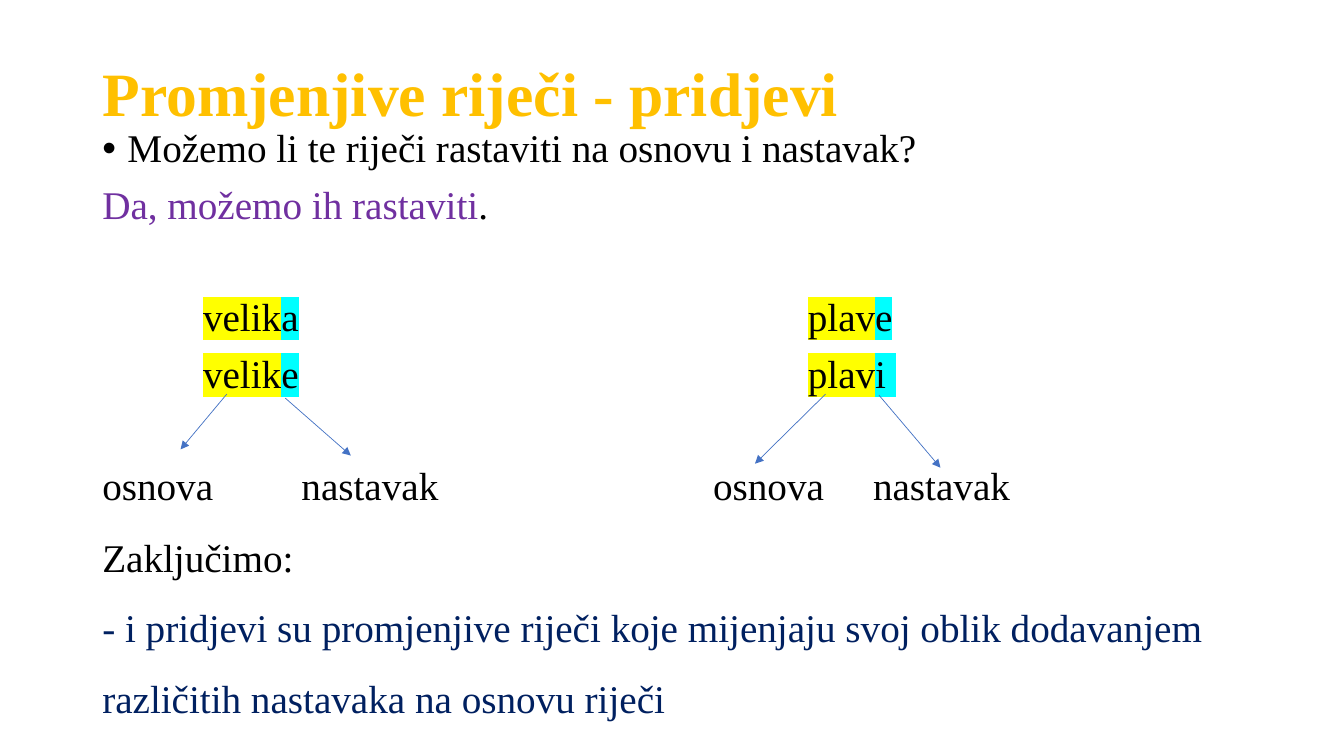
from dataclasses import dataclass

from lxml.etree import SubElement
from pptx import Presentation
from pptx.dml.color import RGBColor
from pptx.enum.shapes import MSO_CONNECTOR
from pptx.enum.text import MSO_ANCHOR, MSO_AUTO_SIZE, PP_ALIGN
from pptx.oxml import parse_xml
from pptx.oxml.ns import nsdecls, qn
from pptx.slide import Slide
from pptx.text.text import TextFrame, _Paragraph
from pptx.util import Pt

COLORS = {
    "title": "FFC000", "text": "000000", "answer": "7030A0",
    "conclusion": "002060", "arrow": "4472C4",
    "stem": "FFFF00", "ending": "00FFFF",
}
FONT = "Times New Roman"
TITLE_SIZE, BODY_SIZE = 44, 28
LEFT, WIDTH = 66, 828
GAP = 10
WIDE_GAP = 50.3  # one empty line plus the usual gap
WORD_TABS = (72, 504)
LABEL_TABS = (142.3, 436.3, 550.6)


@dataclass(frozen=True)
class Piece:
    text: str
    color: str = "text"
    highlight: str = ""


@dataclass(frozen=True)
class Line:
    pieces: tuple[Piece, ...]
    before: float = GAP
    spacing: float = 0.9
    tabs: tuple[float, ...] = ()
    bullet: bool = False


@dataclass(frozen=True)
class Arrow:
    start: tuple[float, float]
    end: tuple[float, float]


def word_line(words: tuple[tuple[str, str], ...], before: float = GAP) -> Line:
    """Words split into a highlighted stem and ending, one at each tab."""
    pieces = []
    for stem, ending in words:
        pieces += [Piece("\t"), Piece(stem, highlight="stem"),
                   Piece(ending, highlight="ending")]
    return Line(tuple(pieces), before, tabs=WORD_TABS)


LINES = (
    Line((Piece("Možemo li te riječi rastaviti na osnovu i nastavak?"),), bullet=True),
    Line((Piece("Da, možemo ih rastaviti", "answer"), Piece("."))),
    word_line((("velik", "a"), ("plav", "e")), WIDE_GAP),
    word_line((("velik", "e"), ("plav", "i "))),
    Line((Piece("osnova\tnastavak\tosnova\tnastavak"),), WIDE_GAP, tabs=LABEL_TABS),
    Line((Piece("Zaključimo:"),), 0, 1.5),
    Line((Piece("- i pridjevi su promjenjive riječi koje mijenjaju svoj oblik "
                "dodavanjem različitih nastavaka na osnovu riječi", "conclusion"),), 0, 1.5),
)
ARROWS = (
    Arrow((162, 281.5), (129, 321)),
    Arrow((203.8, 284.4), (250.6, 325.4)),
    Arrow((589.7, 281.5), (539.3, 331.2)),
    Arrow((627.8, 282.2), (671.8, 334.1)),
)


def add_piece(paragraph: _Paragraph, piece: Piece, size: float, bold: bool = False) -> None:
    run = paragraph.add_run()
    run.text = piece.text
    run.font.size = Pt(size)
    run.font.bold = bold
    run.font.color.rgb = RGBColor.from_string(COLORS[piece.color])
    if piece.highlight:
        run.font._element.append(parse_xml(
            f'<a:highlight {nsdecls("a")}>'
            f'<a:srgbClr val="{COLORS[piece.highlight]}"/></a:highlight>'))
    run.font.name = FONT


def add_line(paragraph: _Paragraph, line: Line) -> None:
    paragraph.line_spacing = line.spacing
    paragraph.space_before = Pt(line.before)
    properties = paragraph._p.get_or_add_pPr()
    if line.bullet:
        properties.set("marL", str(Pt(18)))
        properties.set("indent", str(-Pt(18)))
        SubElement(properties, qn("a:buFont"), typeface="Arial")
        SubElement(properties, qn("a:buChar"), char="•")
    if line.tabs:
        tab_list = SubElement(properties, qn("a:tabLst"))
        for position in line.tabs:
            SubElement(tab_list, qn("a:tab"), pos=str(Pt(position)), algn="l")
    for piece in line.pieces:
        add_piece(paragraph, piece, BODY_SIZE)


def prepare_frame(frame: TextFrame, anchor: MSO_ANCHOR) -> None:
    frame.word_wrap = True
    frame.auto_size = MSO_AUTO_SIZE.NONE
    frame.vertical_anchor = anchor


def add_title(slide: Slide) -> None:
    title = slide.shapes.title
    title.left, title.top, title.width, title.height = (
        Pt(LEFT), Pt(28.75), Pt(WIDTH), Pt(80))
    prepare_frame(title.text_frame, MSO_ANCHOR.MIDDLE)
    paragraph = title.text_frame.paragraphs[0]
    paragraph.alignment = PP_ALIGN.LEFT
    paragraph.line_spacing = 0.9
    add_piece(paragraph, Piece("Promjenjive riječi - pridjevi", "title"), TITLE_SIZE, bold=True)


def add_body(slide: Slide) -> None:
    box = slide.shapes.add_textbox(Pt(LEFT), Pt(88.5), Pt(WIDTH), Pt(422.6))
    frame = box.text_frame
    prepare_frame(frame, MSO_ANCHOR.TOP)
    for index, line in enumerate(LINES):
        add_line(frame.add_paragraph() if index else frame.paragraphs[0], line)


def add_arrow(slide: Slide, arrow: Arrow) -> None:
    connector = slide.shapes.add_connector(
        MSO_CONNECTOR.STRAIGHT, *map(Pt, arrow.start + arrow.end))
    connector.line.width = Pt(0.5)
    connector.line.color.rgb = RGBColor.from_string(COLORS["arrow"])
    SubElement(connector.line._get_or_add_ln(), qn("a:tailEnd"), type="triangle")
    SubElement(connector._element.spPr, qn("a:effectLst"))


def main() -> None:
    presentation = Presentation()
    presentation.slide_width, presentation.slide_height = Pt(960), Pt(540)
    slide = presentation.slides.add_slide(presentation.slide_layouts[5])

    # Heading, text and arrows from words to their parts
    add_title(slide)
    add_body(slide)
    for arrow in ARROWS:
        add_arrow(slide, arrow)

    presentation.save("out.pptx")


if __name__ == "__main__":
    main()
